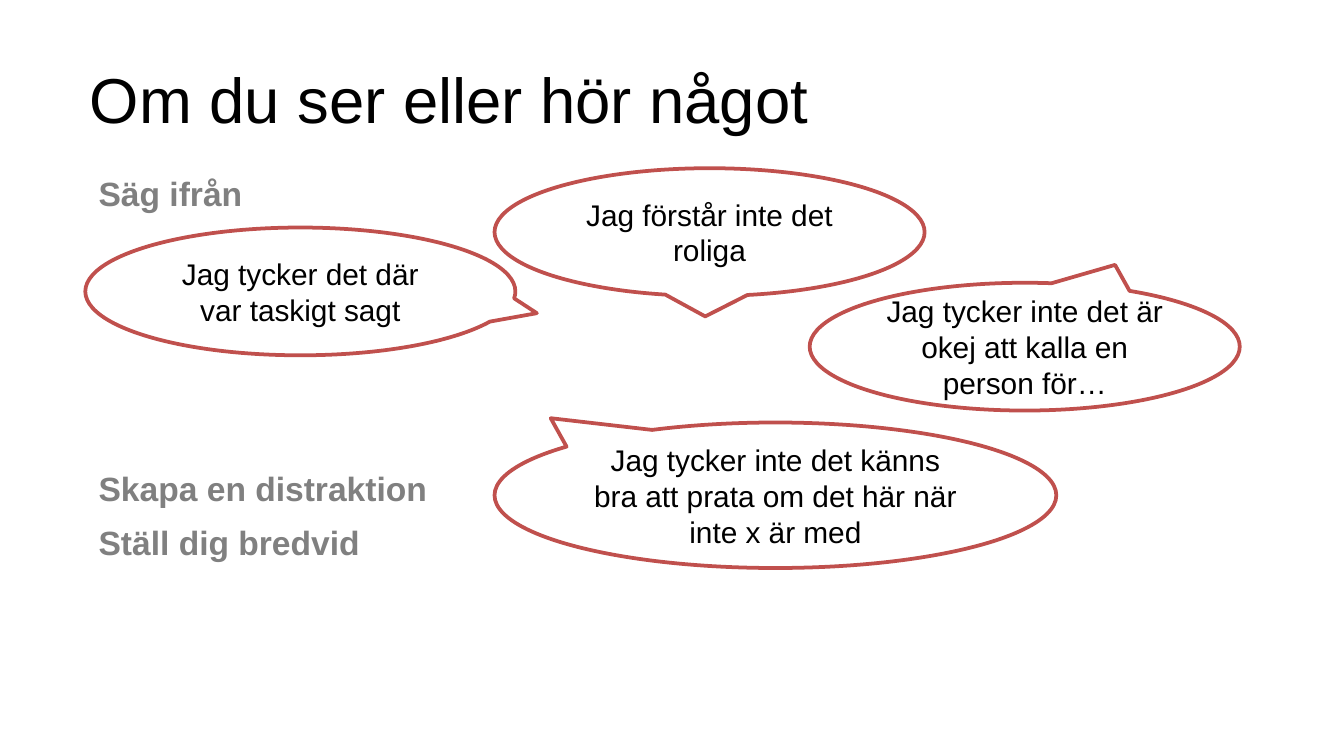
from pptx import Presentation
from pptx import util as u
from pptx.dml.color import RGBColor
from pptx.enum import shapes, text

COLORS = {"ink": "000000", "action": "808080", "outline": "C0504D", "paper": "FFFFFF"}
FONT = "Arial"

# Callouts: left, top, width, height in percent of the region, tail offset, wording
CALLOUTS = [
    (6.35, 30.1, 32, 16.9, (0.55, 0.17), "Jag tycker det där var taskigt sagt"),
    (36.8, 22.25, 32, 16.9, (-0.01, 0.66), "Jag förstår inte det roliga"),
    (36.8, 55.9, 41.8, 19.25, (-0.4, -0.53),
     "Jag tycker inte det känns bra att prata om det här när inte x är med"),
    (60.25, 37.4, 32, 16.9, (0.21, -0.64),
     "Jag tycker inte det är okej att kalla en person för…"),
]
# Actions: wording and space before in points
ACTIONS = [("Säg ifrån", 0), ("Skapa en distraktion", 132), ("Ställ dig bredvid", 3.1)]


def rgb(name):
    return RGBColor.from_string(COLORS[name])


def share(box, left, top, width, height):
    """Turn percentages of a box into a box on the slide."""
    x, y, w, h = box
    return (int(x + w * left / 100), int(y + h * top / 100),
            int(w * width / 100), int(h * height / 100))


def style(p, size, color, bold=False):
    for r in p.runs:
        r.font.name = FONT
        r.font.size = u.Pt(size)
        r.font.bold = bold
        r.font.color.rgb = rgb(color)


def text_frame(slide, box):
    tf = slide.shapes.add_textbox(*box).text_frame
    tf.word_wrap = True
    return tf


def add_title(slide, box, wording):
    tf = text_frame(slide, box)
    tf.text = wording
    style(tf.paragraphs[0], 34, "ink")


def add_actions(slide, box):
    tf = text_frame(slide, box)
    for i, (wording, gap) in enumerate(ACTIONS):
        p = tf.add_paragraph() if i else tf.paragraphs[0]
        p.text = wording
        p.line_spacing = 1.2
        p.space_before = u.Pt(gap)
        style(p, 18, "action", bold=True)


def add_callouts(slide, box):
    for left, top, width, height, tail, wording in CALLOUTS:
        sp = slide.shapes.add_shape(shapes.MSO_SHAPE.OVAL_CALLOUT,
                                    *share(box, left, top, width, height))
        sp.adjustments[0], sp.adjustments[1] = tail
        sp.shadow.inherit = False
        sp.fill.solid()
        sp.fill.fore_color.rgb = rgb("paper")
        sp.line.color.rgb = rgb("outline")
        sp.line.width = u.Pt(2)
        tf = sp.text_frame
        tf.word_wrap = True
        tf.vertical_anchor = text.MSO_ANCHOR.MIDDLE
        tf.text = wording
        p = tf.paragraphs[0]
        p.alignment = text.PP_ALIGN.CENTER
        style(p, 16, "ink")


def main():
    # Widescreen page, 16:9
    prs = Presentation()
    prs.slide_width = u.Inches(10)
    prs.slide_height = prs.slide_width * 9 // 16
    slide = prs.slides.add_slide(prs.slide_layouts[6])
    page = (0, 0, prs.slide_width, prs.slide_height)

    # Heading, list of actions, things to say
    add_title(slide, share(page, 5.7, 7.1, 70.6, 15.5), "Om du ser eller hör något")
    add_actions(slide, share(page, 6.35, 20.95, 84.8, 63.2))
    add_callouts(slide, page)

    prs.save("out.pptx")


if __name__ == "__main__":
    main()
